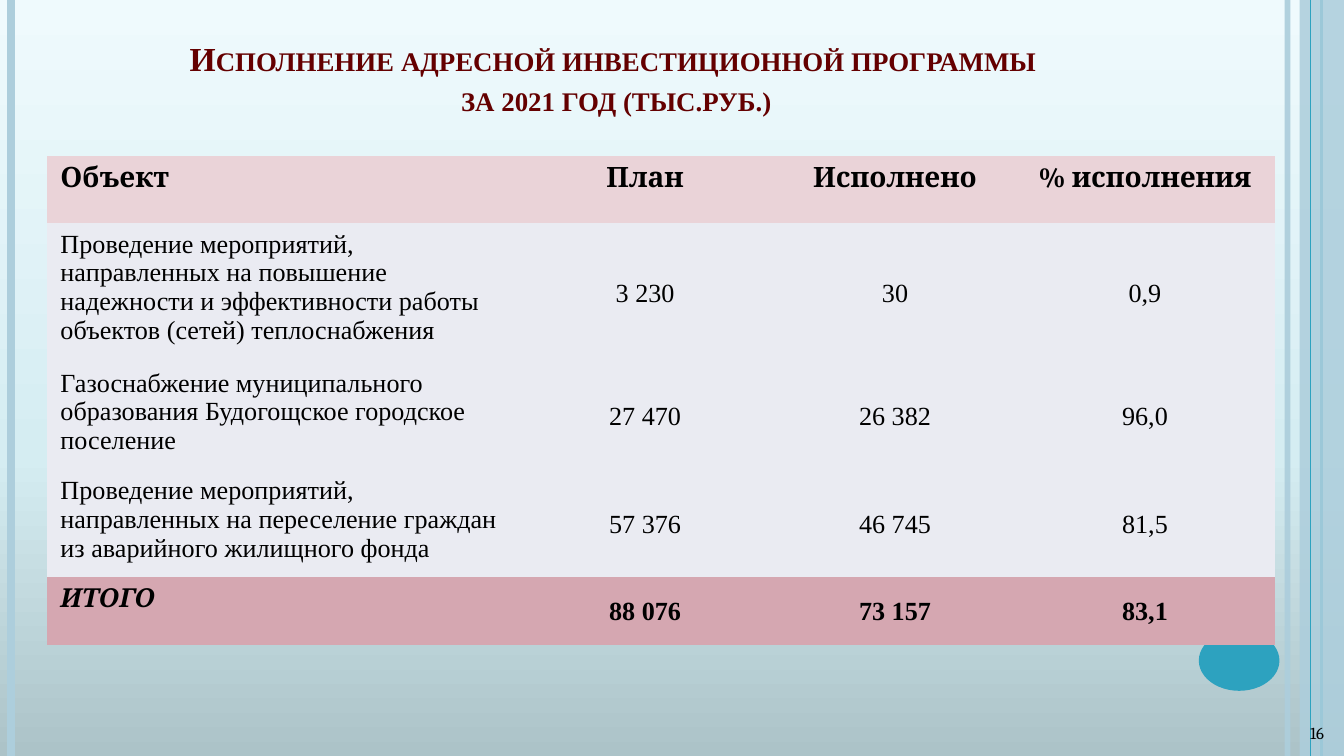
from copy import deepcopy

from pptx import Presentation
from pptx.dml.color import RGBColor
from pptx.enum.shapes import MSO_CONNECTOR, MSO_SHAPE
from pptx.enum.text import MSO_ANCHOR, PP_ALIGN
from pptx.oxml.ns import qn
from pptx.util import Inches, Pt
from lxml import etree

STRAIGHT = MSO_CONNECTOR.STRAIGHT
RECTANGLE, OVAL = MSO_SHAPE.RECTANGLE, MSO_SHAPE.OVAL
TOP, MIDDLE, BOTTOM = MSO_ANCHOR.TOP, MSO_ANCHOR.MIDDLE, MSO_ANCHOR.BOTTOM
LEFT, CENTER = PP_ALIGN.LEFT, PP_ALIGN.CENTER

WIDTH = 10
HEIGHT = WIDTH * 9 / 16
SERIF, HEADING = "Times New Roman", "Cambria"
PALE_BLUE, TEAL = "ADCEDC", "2DA2BF"
NO_GRID_STYLE = "{2D5ABB26-0587-4C30-8999-92F81FD0307C}"

COLUMN_WIDTHS = [3.48, 1.94, 1.78, 1.94]
ROW_HEIGHT = 0.5
ROWS = [
    ["Объект", "План", "Исполнено", "% исполнения"],
    ["Проведение мероприятий, направленных на повышение надежности и "
     "эффективности работы объектов (сетей) теплоснабжения",
     "3 230", "30", "0,9"],
    ["Газоснабжение муниципального образования Будогощское городское поселение",
     "27 470", "26 382", "96,0"],
    ["Проведение мероприятий, направленных на переселение граждан из "
     "аварийного жилищного фонда", "57 376", "46 745", "81,5"],
    ["ИТОГО", "88 076", "73 157", "83,1"],
]


def rgb(value):
    return RGBColor.from_string(value)


def set_alpha(fill_parent, percent):
    color = fill_parent.find(".//" + qn("a:srgbClr"))
    etree.SubElement(color, qn("a:alpha")).set("val", str(percent * 1000))


def write(frame, text, size=14, font=SERIF, color="000000", bold=False,
          italic=False, align=LEFT, small_caps=False):
    para = frame.paragraphs[0]
    para.text = text
    para.alignment = align
    for span in para.runs:
        span.font.size = Pt(size)
        span.font.name = font
        span.font.bold = bold
        span.font.italic = italic
        span.font.color.rgb = rgb(color)
        if small_caps:
            span.font._element.set("cap", "small")


def add_text(page, box, text, anchor=TOP, **style):
    frame = page.shapes.add_textbox(*map(Inches, box)).text_frame
    frame.word_wrap = True
    frame.vertical_anchor = anchor
    write(frame, text, **style)


def add_stripe(page, x, top, height, color, weight, alpha=100):
    line = page.shapes.add_connector(
        STRAIGHT, Inches(x), Inches(top), Inches(x), Inches(top + height))
    line.line.color.rgb = rgb(color)
    line.line.width = Pt(weight)
    properties = line._element.spPr
    if alpha < 100:
        set_alpha(properties, alpha)
    etree.SubElement(properties, qn("a:effectLst"))


def add_panel(page, kind, box, color, alpha=100):
    panel = page.shapes.add_shape(kind, *map(Inches, box))
    panel.shadow.inherit = False
    panel.fill.solid()
    panel.fill.fore_color.rgb = rgb(color)
    panel.line.fill.background()
    if alpha < 100:
        set_alpha(panel._element.spPr, alpha)


def paint_background(page):
    fill = page.background.fill
    fill.gradient()
    fill.gradient_angle = 90
    first_stop = page.element.xpath(".//a:gs")[0]
    first_stop.addnext(deepcopy(first_stop))
    stops = [(0, "ACC3C8"), (0.4, "D5EDF2"), (1, "EFFAFD")]
    for stop, (position, color) in zip(fill.gradient_stops, stops):
        stop.position = position
        stop.color.rgb = rgb(color)


def add_decoration(page, box):
    left, top, width, height = box
    right = left + width
    add_stripe(page, right - 0.42, top, height, PALE_BLUE, 3, alpha=93)
    add_stripe(page, left + 0.08, top, height, PALE_BLUE, 4.5)
    add_stripe(page, right - 0.17, top, height, TEAL, 1.5)
    add_panel(page, RECTANGLE, (right - 0.33, top, 0.33, height), PALE_BLUE, alpha=87)
    add_stripe(page, right - 0.25, top, height, TEAL, 0.75)
    add_panel(page, OVAL, (right - 1.08, top + 4.69, 0.6, 0.45), TEAL)


def add_budget_table(page, box):
    frame = page.shapes.add_table(len(ROWS), len(COLUMN_WIDTHS), *map(Inches, box))
    frame._element.xpath(".//a:tableStyleId")[0].text = NO_GRID_STYLE
    table = frame.table
    table.first_row = table.horz_banding = False
    for column, width in zip(table.columns, COLUMN_WIDTHS):
        column.width = Inches(width)
    for row in table.rows:
        row.height = Inches(ROW_HEIGHT)
    frame.width, frame.height = map(Inches, box[2:])
    for r, values in enumerate(ROWS):
        header, total = r == 0, r == len(ROWS) - 1
        color = "EAD3D8" if header else "D5A7B1" if total else "EAEBF2"
        for c, text in enumerate(values):
            cell = table.cell(r, c)
            label = c == 0
            cell.fill.solid()
            cell.fill.fore_color.rgb = rgb(color)
            write(cell.text_frame, text, size=15 if header else 14,
                  font=HEADING if header or (total and label) else SERIF,
                  bold=header or total, italic=total and label,
                  align=LEFT if label else CENTER)
            if not header and not label:
                cell.vertical_anchor = MIDDLE
                cell.margin_left = cell.margin_right = cell.margin_top = Inches(0.01)
                cell.margin_bottom = 0


def main():
    deck = Presentation()
    deck.slide_width, deck.slide_height = Inches(WIDTH), Inches(HEIGHT)
    page = deck.slides.add_slide(deck.slide_layouts[6])
    paint_background(page)
    add_decoration(page, (0, 0, WIDTH, HEIGHT))
    add_text(page, (0.5, 0.14, 8.17, 0.79),
             "Исполнение адресной инвестиционной программы \vза 2021 год (тыс.руб.)",
             size=18, color="640000", bold=True, align=CENTER, anchor=BOTTOM,
             small_caps=True)
    add_budget_table(page, (0.35, 1.16, 9.13, 3.64))
    add_text(page, (9.65, 5.33, 0.42, 0.25), "16", size=9, font=HEADING)
    deck.save("out.pptx")


if __name__ == "__main__":
    main()
